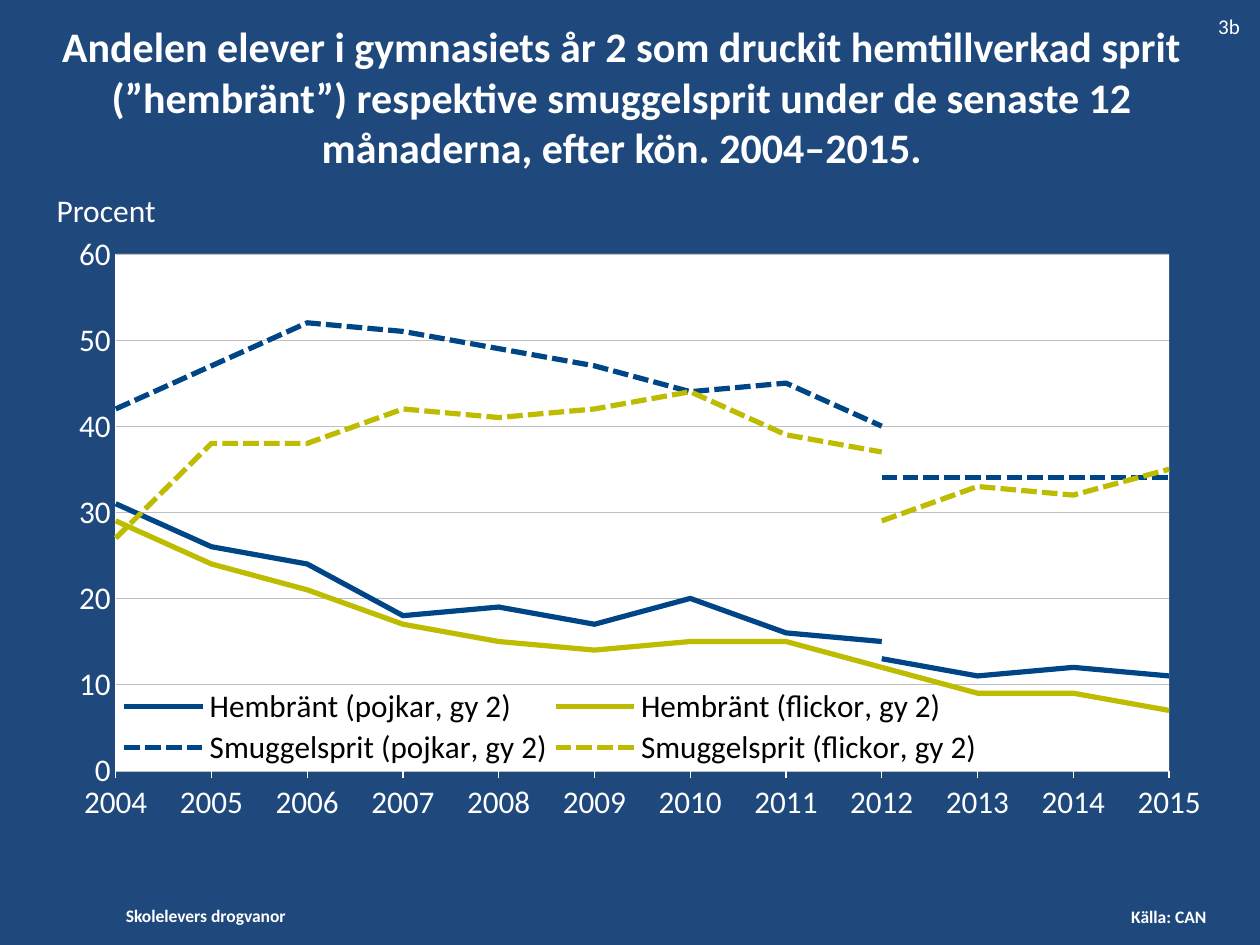
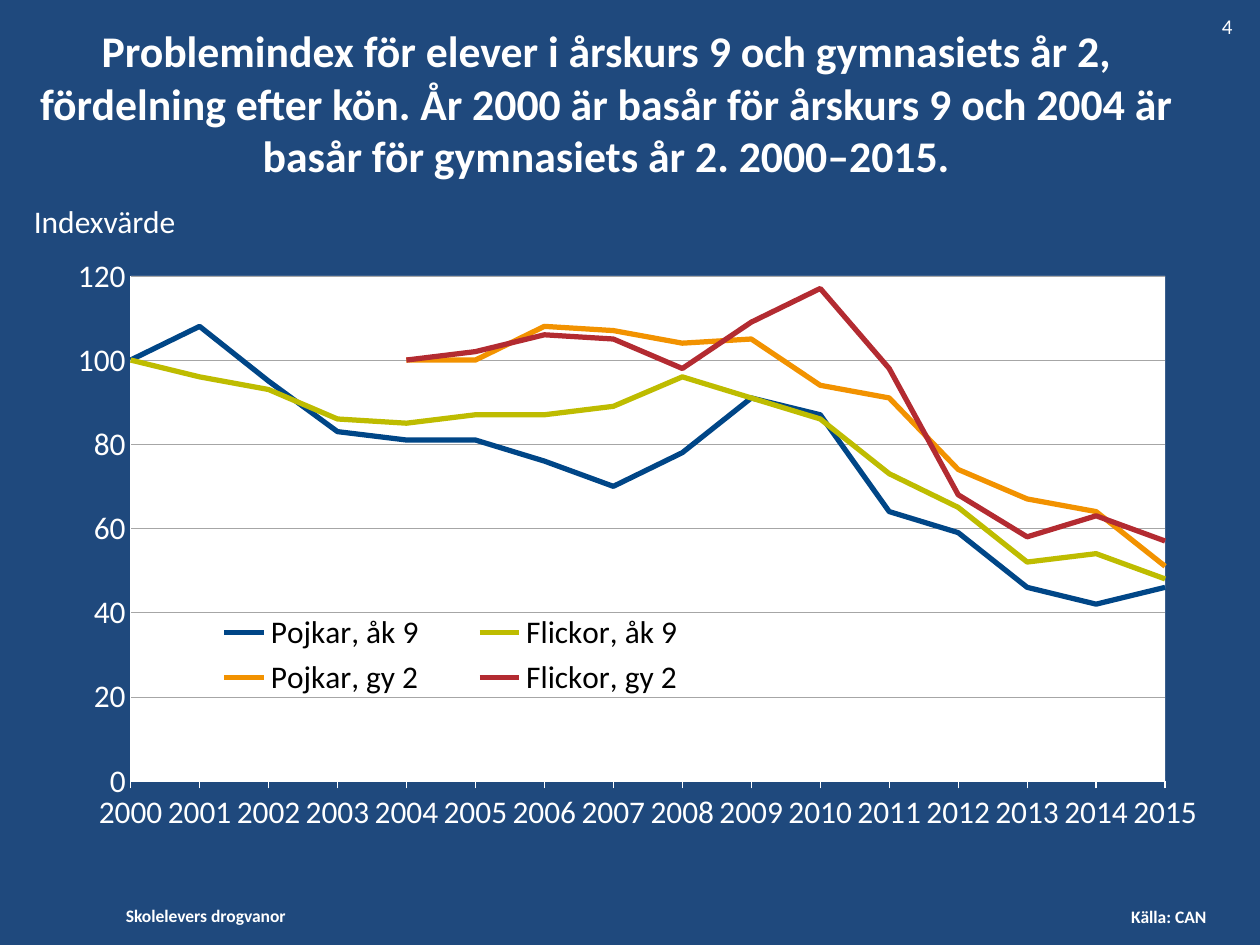
import pptx
import pptx.util
import pptx.chart.data
import pptx.dml.color
import pptx.enum.chart
import pptx.enum.dml
import pptx.enum.text
import pptx.oxml
import pptx.oxml.ns

Inches = pptx.util.Inches
Pt = pptx.util.Pt
RGBColor = pptx.dml.color.RGBColor
qn = pptx.oxml.ns.qn
MIDDLE = pptx.enum.text.MSO_ANCHOR.MIDDLE
TOP = pptx.enum.text.MSO_ANCHOR.TOP

FONT = "Calibri"
NAVY = RGBColor(0x1F, 0x49, 0x7D)
WHITE = RGBColor(0xFF, 0xFF, 0xFF)
BLACK = RGBColor(0x00, 0x00, 0x00)
BLUE = RGBColor(0x00, 0x46, 0x87)
LIME = RGBColor(0xBE, 0xBC, 0x00)
AMBER = RGBColor(0xF2, 0x92, 0x00)
RED = RGBColor(0xB3, 0x2B, 0x31)
SILVER = RGBColor(0xBF, 0xBF, 0xBF)
GREY = RGBColor(0xA6, 0xA6, 0xA6)


def set_font(font, size, color, bold=False):
    font.name = FONT
    font.size = Pt(size)
    font.bold = bold
    font.color.rgb = color


def add_text(slide, box, text, size, bold=False, anchor=TOP):
    frame = slide.shapes.add_textbox(*map(Inches, box)).text_frame
    frame.word_wrap = True
    frame.vertical_anchor = anchor
    run = frame.paragraphs[0].add_run()
    run.text = text
    set_font(run.font, size, WHITE, bold)


def add_title(slide, box, text, size):
    title = slide.shapes.title
    title.left, title.top, title.width, title.height = map(Inches, box)
    frame = title.text_frame
    frame.auto_size = pptx.enum.text.MSO_AUTO_SIZE.NONE
    frame.vertical_anchor = MIDDLE
    para = frame.paragraphs[0]
    para.alignment = pptx.enum.text.PP_ALIGN.CENTER
    run = para.add_run()
    run.text = text
    set_font(run.font, size, WHITE, True)


def add_footer(slide):
    add_text(slide, (0.9, 7.13, 1.68, 0.27), "Skolelevers drogvanor", 10, True)
    add_text(slide, (8.88, 7.14, 0.94, 0.27), "Källa: CAN", 10, True)


def make_xml(body):
    return pptx.oxml.parse_xml(body.replace(
        ">", " " + pptx.oxml.ns.nsdecls("c", "a") + ">", 1))


def make_layout(box, inner=False):
    """Manual layout, as fractions of the chart's box."""
    target = '<c:layoutTarget val="inner"/>' if inner else ""
    modes = "".join(f'<c:{k}Mode val="edge"/>' for k in "xy")
    sizes = "".join(f'<c:{k} val="{v}"/>' for k, v in zip("xywh", box))
    return make_xml("<c:layout><c:manualLayout>" + target + modes + sizes
                    + "</c:manualLayout></c:layout>")


def style_plot(chart, box):
    area = chart._chartSpace.chart.plotArea
    for old in area.findall(qn("c:layout")):
        area.remove(old)
    area.insert(0, make_layout(box, inner=True))
    area.append(make_xml(
        f'<c:spPr><a:solidFill><a:srgbClr val="{WHITE}"/></a:solidFill></c:spPr>'))


def style_axes(chart, top, step, grid):
    marks = pptx.enum.chart.XL_TICK_MARK
    value, years = chart.value_axis, chart.category_axis
    for axis, mark, width in ((value, marks.NONE, 0.25),
                              (years, marks.OUTSIDE, 0.75)):
        set_font(axis.tick_labels.font, 18, WHITE)
        axis.major_tick_mark = mark
        axis.minor_tick_mark = marks.NONE
        axis.format.line.color.rgb = WHITE
        axis.format.line.width = Pt(width)
    value.minimum_scale, value.maximum_scale = 0, top
    value.major_unit = step
    value.tick_labels.number_format = "0"
    value.tick_labels.number_format_is_linked = False
    value.has_major_gridlines = True
    value.major_gridlines.format.line.color.rgb = grid
    value.major_gridlines.format.line.width = Pt(0.25)
    # Lines start on the axis itself
    value._element.find(qn("c:majorUnit")).addprevious(
        make_xml('<c:crossBetween val="midCat"></c:crossBetween>'))


def style_legend(chart, box, hidden):
    chart.has_legend = True
    legend = chart.legend
    legend.position = pptx.enum.chart.XL_LEGEND_POSITION.TOP
    legend.include_in_layout = True
    set_font(legend.font, 18, BLACK)
    spot = legend._element.find(qn("c:legendPos"))
    for old in legend._element.findall(qn("c:layout")):
        legend._element.remove(old)
    spot.addnext(make_layout(box))
    for num in reversed(hidden):
        spot.addnext(make_xml(f'<c:legendEntry><c:idx val="{num}"/>'
                              '<c:delete val="1"/></c:legendEntry>'))


def add_lines(slide, box, start, series, plot, legend, top, step, grid, hidden=()):
    """Line chart; series holds (name, colour, dashed, values)."""
    data = pptx.chart.data.CategoryChartData(number_format="0")
    data.categories = [str(year) for year in range(start, 2016)]
    for name, _, _, vals in series:
        data.add_series(name, vals)
    chart = slide.shapes.add_chart(pptx.enum.chart.XL_CHART_TYPE.LINE,
                                   *map(Inches, box), data).chart
    chart.has_title = False
    set_font(chart.font, 18, WHITE)
    chart.plots[0].vary_by_categories = False
    for line, (_, color, dashed, _) in zip(chart.plots[0].series, series):
        line.smooth = False
        line.format.line.color.rgb = color
        line.format.line.width = Pt(3)
        if dashed:
            line.format.line.dash_style = pptx.enum.dml.MSO_LINE.SQUARE_DOT
    style_plot(chart, plot)
    style_axes(chart, top, step, grid)
    style_legend(chart, legend, hidden)


def add_slide(deck, box, title, size, mark, mark_box, unit, unit_box):
    slide = deck.slides.add_slide(deck.slide_layouts[5])
    add_footer(slide)
    add_title(slide, box, title, size)
    add_text(slide, mark_box, mark, 12)
    add_text(slide, unit_box, unit, 18, anchor=MIDDLE)
    return slide


def build_spirits(deck):
    slide = add_slide(
        deck, (0.23, 0.14, 9.41, 1.25),
        "Andelen elever i gymnasiets år 2 som druckit hemtillverkad sprit "
        "(”hembränt”) respektive smuggelsprit under de senaste 12 månaderna, "
        "efter kön. 2004–2015.", 24,
        "3b", (9.57, 0.06, 0.43, 0.3), "Procent", (0.35, 1.47, 1.12, 0.4))
    # Each group breaks in 2012: values up to then, and from then on
    groups = [
        ("Hembränt (pojkar, gy 2)", BLUE, False,
         [31, 26, 24, 18, 19, 17, 20, 16, 15], [13, 11, 12, 11]),
        ("Hembränt (flickor, gy 2)", LIME, False,
         [29, 24, 21, 17, 15, 14, 15, 15, 12], [12, 9, 9, 7]),
        ("Smuggelsprit (pojkar, gy 2)", BLUE, True,
         [42, 47, 52, 51, 49, 47, 44, 45, 40], [34, 34, 34, 34]),
        ("Smuggelsprit (flickor, gy 2)", LIME, True,
         [27, 38, 38, 42, 41, 42, 44, 39, 37], [29, 33, 32, 35]),
    ]
    series = []
    for name, color, dashed, early, late in groups:
        series.append((name, color, dashed, early + [None] * 3))
        series.append((f"Series {len(series) + 1}", color, dashed,
                       [None] * 8 + late))
    add_lines(slide, (0.47, 1.48, 9.06, 5.2), 2004, series,
              (0.05, 0.103, 0.933, 0.789), (0.05, 0.76, 0.77, 0.13),
              60, 10, SILVER, hidden=range(1, 8, 2))


def build_index(deck):
    slide = add_slide(
        deck, (0.12, 0.3, 9.38, 1.03),
        "Problemindex för elever i årskurs 9 och gymnasiets år 2, fördelning "
        "efter kön. År 2000 är basår för årskurs 9 och 2004 är basår för "
        "gymnasiets år 2. 2000–2015.", 25,
        "4", (9.6, 0.06, 0.4, 0.3), "Indexvärde", (0.17, 1.55, 1.45, 0.4))
    gap = [None] * 4
    series = [
        ("Pojkar, åk 9", BLUE, False,
         [100, 108, 95, 83, 81, 81, 76, 70, 78, 91, 87, 64, 59, 46, 42, 46]),
        ("Flickor, åk 9", LIME, False,
         [100, 96, 93, 86, 85, 87, 87, 89, 96, 91, 86, 73, 65, 52, 54, 48]),
        ("Pojkar, gy 2", AMBER, False,
         gap + [100, 100, 108, 107, 104, 105, 94, 91, 74, 67, 64, 51]),
        ("Flickor, gy 2", RED, False,
         gap + [100, 102, 106, 105, 98, 109, 117, 98, 68, 58, 63, 57]),
    ]
    add_lines(slide, (0.48, 1.74, 9.02, 5.05), 2000, series,
              (0.062, 0.089, 0.914, 0.794), (0.1, 0.61, 0.49, 0.15),
              120, 20, GREY)


def main():
    deck = pptx.Presentation()
    deck.slide_width, deck.slide_height = Inches(10), Inches(7.5)
    fill = deck.slide_master.background.fill
    fill.solid()
    fill.fore_color.rgb = NAVY
    build_spirits(deck)
    build_index(deck)
    deck.save("out.pptx")


if __name__ == "__main__":
    main()
